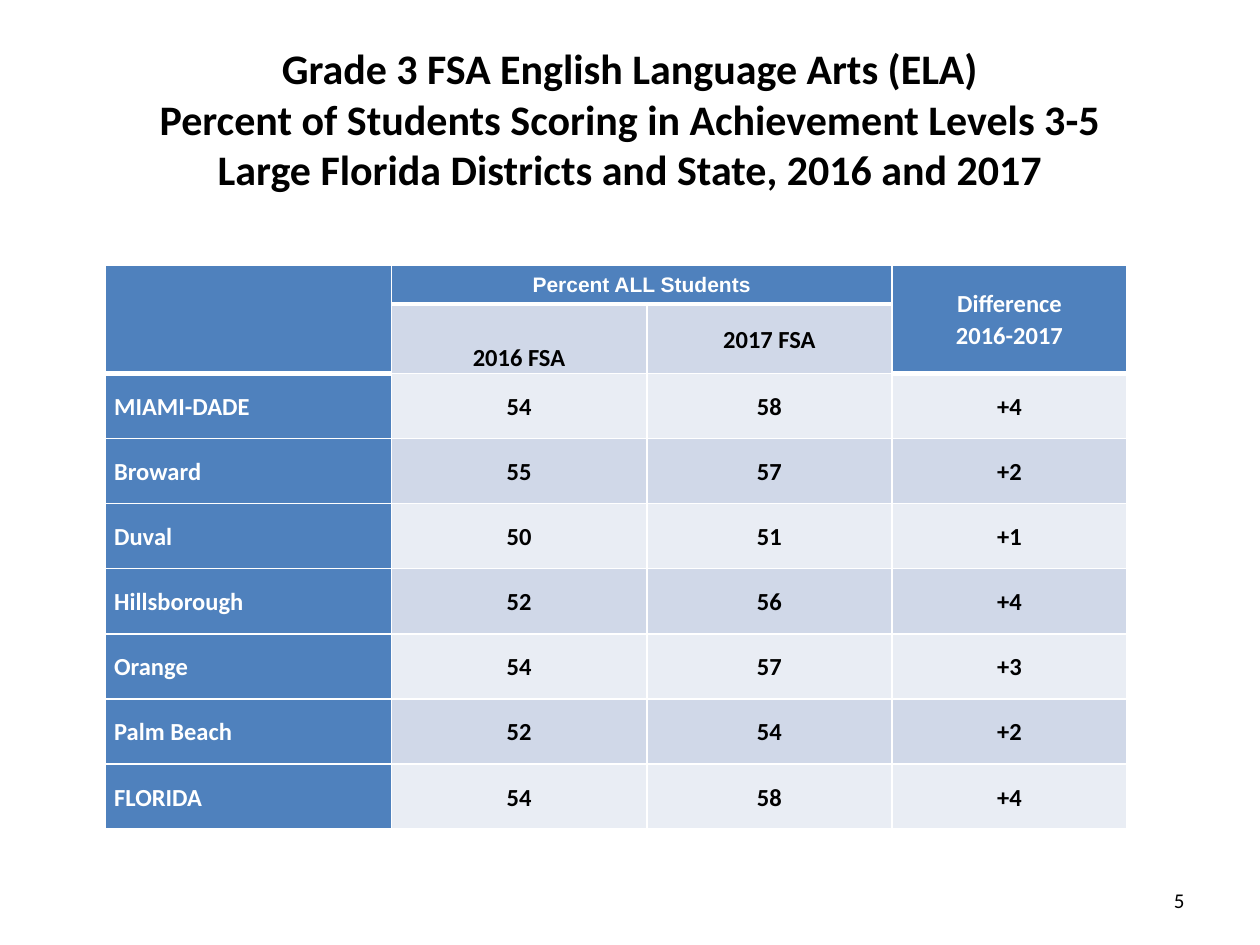
from lxml.etree import SubElement
from pptx import Presentation
from pptx.dml.color import RGBColor
from pptx.enum.text import MSO_ANCHOR, PP_ALIGN
from pptx.oxml.ns import qn
from pptx.util import Cm, Pt

COLORS = {
    "header": "4F81BD",
    "band_dark": "D0D8E8",
    "band_light": "E9EDF4",
    "white": "FFFFFF",
    "black": "000000",
}
TITLE = [
    "Grade 3 FSA English Language Arts (ELA)",
    "Percent of Students Scoring in Achievement Levels 3-5",
    "Large Florida Districts and State, 2016 and 2017",
]
RESULTS = [
    ("MIAMI-DADE", "54", "58", "+4"),
    ("Broward", "55", "57", "+2"),
    ("Duval", "50", "51", "+1"),
    ("Hillsborough", "52", "56", "+4"),
    ("Orange", "54", "57", "+3"),
    ("Palm Beach", "52", "54", "+2"),
    ("FLORIDA", "54", "58", "+4"),
]
COLUMN_SHARES = (0.28, 0.25, 0.24, 0.23)
HEADER_HEIGHTS = (0.79, 1.4)


def add_run(paragraph, text, size, color, bold=False, font="Calibri"):
    run = paragraph.add_run()
    run.text = text
    run.font.name = font
    run.font.size = Pt(size)
    run.font.bold = bold
    run.font.color.rgb = RGBColor.from_string(COLORS[color])


def add_text_frame(slide, left, top, width, height):
    frame = slide.shapes.add_textbox(Cm(left), Cm(top), Cm(width), Cm(height)).text_frame
    frame.word_wrap = True
    frame.vertical_anchor = MSO_ANCHOR.MIDDLE
    return frame


def add_title(slide, left, top, width, height):
    heading = add_text_frame(slide, left, top, width, height).paragraphs[0]
    heading.alignment = PP_ALIGN.CENTER
    for number, line in enumerate(TITLE):
        if number:
            heading.add_line_break()
        add_run(heading, line, 24, "black", bold=True)


def add_page_number(slide, left, top, width, height):
    number = add_text_frame(slide, left, top, width, height).paragraphs[0]
    number.alignment = PP_ALIGN.RIGHT
    add_run(number, "5", 12, "black")


def set_borders(cell, top=1, bottom=1):
    properties = cell._tc.get_or_add_tcPr()
    # Border lines must come before the fill
    edges = (("a:lnL", 1), ("a:lnR", 1), ("a:lnT", top), ("a:lnB", bottom))
    for position, (tag, width) in enumerate(edges):
        line = SubElement(properties, qn(tag), w=str(Pt(width)))
        fill = SubElement(line, qn("a:solidFill"))
        SubElement(fill, qn("a:srgbClr"), val=COLORS["white"])
        properties.insert(position, line)


def style_cell(cell, fill, top=1, bottom=1):
    cell.fill.solid()
    cell.fill.fore_color.rgb = RGBColor.from_string(COLORS[fill])
    cell.margin_left = cell.margin_right = Cm(0.18)
    cell.margin_top = cell.margin_bottom = 0
    cell.vertical_anchor = MSO_ANCHOR.MIDDLE
    set_borders(cell, top, bottom)


def write_cell(cell, lines, color, align=PP_ALIGN.CENTER, size=14, font="Calibri"):
    frame = cell.text_frame
    for number, line in enumerate(lines):
        paragraph = frame.add_paragraph() if number else frame.paragraphs[0]
        paragraph.alignment = align
        paragraph.line_spacing = 1.07
        add_run(paragraph, line, size, color, bold=True, font=font)


def fill_header(table):
    # Spanning cells in the header colour, closed by a thick line
    for column in range(4):
        style_cell(table.cell(0, column), "header", bottom=3)
    for column in (0, 3):
        style_cell(table.cell(1, column), "header", bottom=3)
    for column in (1, 2):
        style_cell(table.cell(1, column), "band_dark", top=3)
    table.cell(0, 0).merge(table.cell(1, 0))
    table.cell(0, 1).merge(table.cell(0, 2))
    table.cell(0, 3).merge(table.cell(1, 3))

    write_cell(table.cell(0, 1), ["Percent ALL Students"], "white", size=12, font="Arial")
    write_cell(table.cell(0, 3), ["Difference", "2016-2017"], "white")
    write_cell(table.cell(1, 1), ["2016 FSA"], "black")
    write_cell(table.cell(1, 2), ["2017 FSA"], "black")
    table.cell(1, 1).vertical_anchor = MSO_ANCHOR.BOTTOM


def fill_results(table):
    for index, (district, *scores) in enumerate(RESULTS):
        row = index + len(HEADER_HEIGHTS)
        band = "band_dark" if index % 2 else "band_light"
        name_cell = table.cell(row, 0)
        style_cell(name_cell, "header", top=1 if index else 3)
        write_cell(name_cell, [district], "white", align=PP_ALIGN.LEFT)
        for column, score in enumerate(scores, start=1):
            under_thick_line = index == 0 and column == 3
            style_cell(table.cell(row, column), band, top=3 if under_thick_line else 1)
            write_cell(table.cell(row, column), [score], "black")


def add_results_table(slide, left, top, width, height):
    row_count = len(HEADER_HEIGHTS) + len(RESULTS)
    table = slide.shapes.add_table(
        row_count, len(COLUMN_SHARES), Cm(left), Cm(top), Cm(width), Cm(height)
    ).table
    table.first_row = table.horz_banding = False

    for column, share in zip(table.columns, COLUMN_SHARES):
        column.width = Cm(width * share)
    result_height = (height - sum(HEADER_HEIGHTS)) / len(RESULTS)
    heights = [*HEADER_HEIGHTS, *[result_height] * len(RESULTS)]
    for row, row_height in zip(table.rows, heights):
        row.height = Cm(row_height)

    fill_header(table)
    fill_results(table)


def main():
    deck = Presentation()
    deck.slide_width, deck.slide_height = Cm(25.4), Cm(19.05)
    slide = deck.slides.add_slide(deck.slide_layouts[6])
    add_title(slide, 1.27, 0.8, 22.86, 3.18)
    add_results_table(slide, 2.12, 5.34, 20.6, 11.38)
    add_page_number(slide, 18.2, 17.65, 5.93, 1.01)
    deck.save("out.pptx")


if __name__ == "__main__":
    main()
